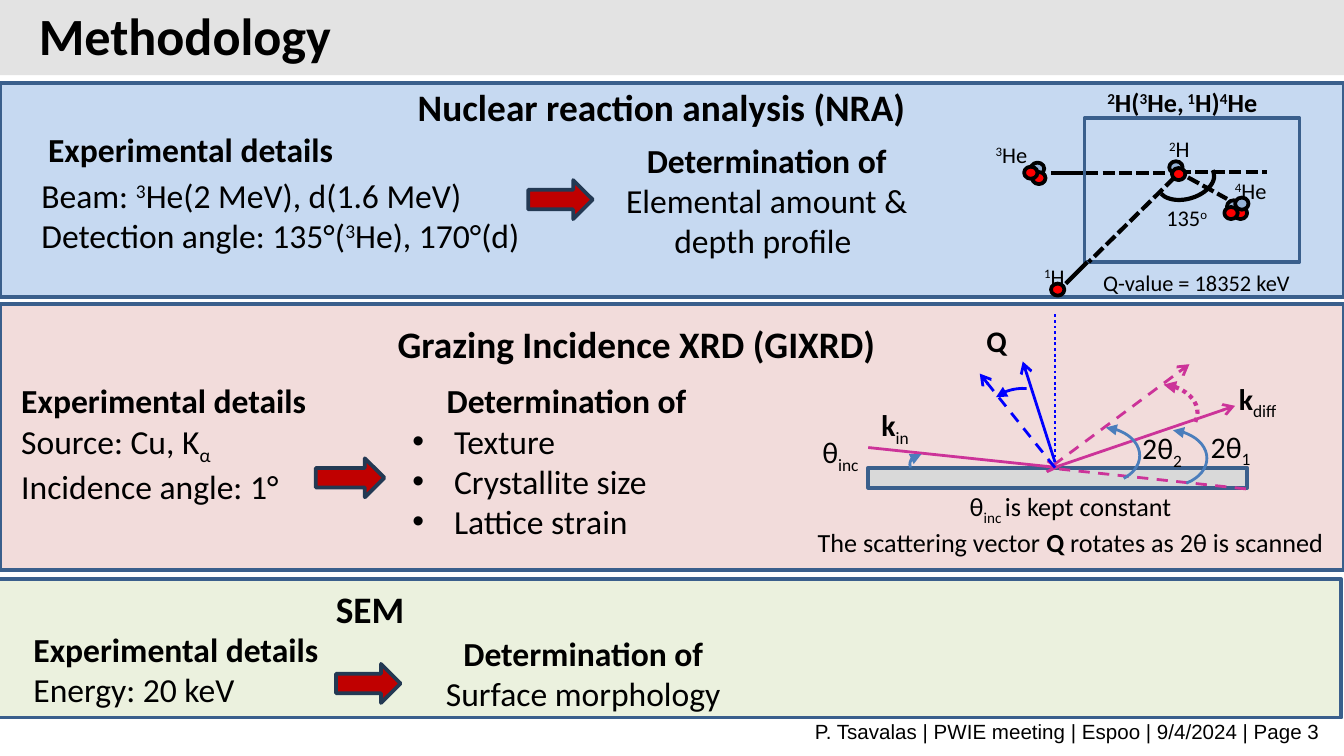
from dataclasses import dataclass
from typing import Any

from lxml import etree
from pptx import Presentation
from pptx.dml.color import RGBColor
from pptx.enum.dml import MSO_LINE
from pptx.enum.shapes import MSO_CONNECTOR, MSO_SHAPE
from pptx.enum.text import MSO_ANCHOR, MSO_AUTO_SIZE, PP_ALIGN
from pptx.oxml.ns import qn
from pptx.util import Inches, Pt

RECT, OVAL, ARC, ARROW = MSO_SHAPE.RECTANGLE, MSO_SHAPE.OVAL, MSO_SHAPE.ARC, MSO_SHAPE.RIGHT_ARROW
DASH, DOT, SHORT_DASH = MSO_LINE.DASH, MSO_LINE.ROUND_DOT, MSO_LINE.SQUARE_DOT
LEFT, CENTER, RIGHT = PP_ALIGN.LEFT, PP_ALIGN.CENTER, PP_ALIGN.RIGHT
TOP, MIDDLE = MSO_ANCHOR.TOP, MSO_ANCHOR.MIDDLE
GROW, FIXED = MSO_AUTO_SIZE.SHAPE_TO_FIT_TEXT, MSO_AUTO_SIZE.NONE
STRAIGHT = MSO_CONNECTOR.STRAIGHT

COLORS = {
    "black": "000000", "band": "E3E3E3", "border": "3A5F8C", "nra": "C6D9F1", "xrd": "F2DCDB",
    "sem": "EBF1DE", "arrow": "C00000", "arrow_edge": "233953", "sample": "D9D9D9",
    "beam": "CC3399", "angle": "4B7EBC", "vector": "0000FF", "neutron": "95B3D7", "proton": "FF0000",
}
BASELINES = {"^": "30000", "_": "-25000"}
DETAILS, RESULT = [("Experimental details", "b")], [("Determination of", "b")]


def color(name):
    """Return the named colour."""
    return RGBColor.from_string(COLORS[name])


def style_line(line, name, width, dash=None, **ends):
    """Colour a line and add dashes and arrowheads (headEnd, tailEnd)."""
    line.fill.solid()
    line.fill.fore_color.rgb = color(name)
    line.width = Pt(width)
    if dash:
        line.dash_style = dash
    for tag, kind in ends.items():
        etree.SubElement(line._get_or_add_ln(), qn(f"a:{tag}")).set("type", kind)


def add_bullet(para):
    """Give a paragraph a hanging round bullet."""
    properties = para._p.get_or_add_pPr()
    properties.set("marL", str(Inches(0.31)))
    properties.set("indent", str(-Inches(0.31)))
    etree.SubElement(properties, qn("a:buFont")).set("typeface", "Arial")
    etree.SubElement(properties, qn("a:buChar")).set("char", "•")


@dataclass
class Region:
    """A box on the page; its parts are placed relative to its corner."""
    page: Any
    left: float
    top: float
    width: float
    height: float

    def place(self, left, top, *size):
        """Turn a local box or point into page lengths."""
        return [Inches(v) for v in (self.left + left, self.top + top, *size)]

    def shape(self, kind, box, fill=None, edge=None, width=2):
        """Add a preset shape."""
        shape = self.page.shapes.add_shape(kind, *self.place(*box))
        shape.shadow.inherit = False
        if fill:
            shape.fill.solid()
            shape.fill.fore_color.rgb = color(fill)
        else:
            shape.fill.background()
        if edge:
            style_line(shape.line, edge, width)
        else:
            shape.line.fill.background()
        return shape

    def panel(self, fill, edge=None):
        """Fill the whole region."""
        self.shape(RECT, (0, 0, self.width, self.height), fill, edge)

    def block_arrow(self, left, top, width=0.48):
        """Add the red arrow from details to results."""
        self.shape(ARROW, (left, top, width, 0.29), "arrow", "arrow_edge")

    def arc(self, box, start, end, name, width=1.5, dash=None, rotation=0, flip=False, **ends):
        """Add an arc between two angles in degrees."""
        arc = self.shape(ARC, box)
        arc.adjustments[0], arc.adjustments[1] = start * 0.6, end * 0.6
        arc.rotation = rotation
        if flip:
            arc._element.spPr.find(qn("a:xfrm")).set("flipH", "1")
        style_line(arc.line, name, width, dash, **ends)

    def line(self, start, end, name, width=1.5, dash=None, **ends):
        """Add a straight line."""
        line = self.page.shapes.add_connector(STRAIGHT, *self.place(*start), *self.place(*end))
        style_line(line.line, name, width, dash, **ends)
        etree.SubElement(line._element.spPr, qn("a:effectLst"))

    def text(self, box, paras, size=18, font="Calibri", align=LEFT, anchor=TOP,
             wrap=True, fill=None, bullets=(), spacing=None):
        """Add paragraphs made of (text, style) spans."""
        shape = self.page.shapes.add_textbox(*self.place(*box))
        if fill:
            shape.fill.solid()
            shape.fill.fore_color.rgb = color(fill)
        frame = shape.text_frame
        frame.word_wrap, frame.vertical_anchor = wrap, anchor
        frame.auto_size = GROW if anchor == TOP else FIXED
        for index, spans in enumerate(paras):
            para = frame.paragraphs[0] if index == 0 else frame.add_paragraph()
            para.alignment = LEFT if index in bullets else align
            if spacing:
                para.line_spacing = Pt(spacing)
            if index in bullets:
                add_bullet(para)
            for words, style in spans:
                span = para.add_run()
                span.text = words
                look = {"name": font, "size": Pt(size), "bold": "b" in style}
                for key, value in look.items():
                    setattr(span.font, key, value)
                span.font.color.rgb = color("black")
                for mark, shift in BASELINES.items():
                    if mark in style:
                        span._r.get_or_add_rPr().set("baseline", shift)


def add_header(region):
    """Draw the title band."""
    region.panel("band")
    region.text((0.19, 0.08, 2.45, 0.38), [[("Methodology", "b")]], 28, anchor=MIDDLE, spacing=32)


def add_footer(region):
    """Write the footer line."""
    words = "P. Tsavalas | PWIE meeting | Espoo | 9/4/2024 | Page 3"
    region.text((0, 0, region.width, region.height), [[(words, "")]], 11, "Arial", RIGHT, MIDDLE)


def add_sem(region):
    """Draw the SEM panel."""
    region.panel("sem", "border")
    region.text((2.42, 0, 1.58, 0.44), [[("SEM", "b")]], 20)
    region.text((0.17, 0.32, 2.49, 0.71), [DETAILS, [("Energy: 20 keV", "")]])
    region.block_arrow(2.52, 0.63)
    region.text((2.75, 0.35, 3.22, 0.71), [RESULT, [("Surface morphology", "")]], align=CENTER)


def add_xrd(region):
    """Draw the GIXRD panel."""
    region.panel("xrd", "border")
    region.text((0.06, 0.52, 2.63, 1.01), [DETAILS, [("Source: Cu, K", ""), ("α", "_")],
                                           [("Incidence angle: 1°", "")]], fill="xrd")
    region.text((2.86, 0.08, 3.96, 0.44), [[("Grazing Incidence XRD (GIXRD)", "b")]], 20, fill="xrd")
    region.block_arrow(2.35, 1.15, 0.51)
    findings = [[(words, "")] for words in ("Texture", "Crystallite size", "Lattice strain")]
    region.text((2.97, 0.52, 2.49, 1.31), [RESULT, *findings], align=CENTER, fill="xrd", bullets=(1, 2, 3))
    add_scattering(Region(region.page, region.left + 5.97, region.top, 4, region.height))


def add_scattering(region):
    """Draw the scattering geometry."""
    region.shape(RECT, (0.49, 1.22, 2.82, 0.15), "sample", "border")
    for start, end, name, dash, ends in (
        ((0.49, 1.07), (1.91, 1.22), "beam", None, {"tailEnd": "arrow"}),
        ((1.87, 1.22), (3.22, 0.76), "beam", None, {"tailEnd": "arrow"}),
        ((1.87, 1.2), (2.88, 0.45), "beam", DASH, {"tailEnd": "arrow"}),
        ((1.88, 1.22), (1.32, 0.52), "vector", DASH, {"tailEnd": "arrow"}),
        ((1.91, 1.23), (3.32, 1.38), "beam", DASH, {}),
        ((1.88, 1.18), (1.64, 0.43), "vector", None, {"tailEnd": "arrow"}),
        ((1.88, 0.08), (1.88, 1.18), "vector", DOT, {}),
    ):
        region.line(start, end, name, dash=dash, **ends)
    for box, start, end, name, extra in (
        ((2.36, 0.6, 0.58, 0.42), 280.27, 14.52, "beam", {"width": 2.25, "dash": DOT}),
        ((0.8, 1.12, 0.17, 0.15), 270, 16.59, "angle", {"flip": True}),
        ((2.43, 0.94, 0.58, 0.42), 280.27, 53.6, "angle", {}),
        ((1.93, 0.92, 0.58, 0.42), 280.27, 44.75, "angle", {}),
        ((1.41, 0.57, 0.5, 0.62), 303.83, 355.68, "vector", {"rotation": 276.4}),
    ):
        region.arc(box, start, end, name, headEnd="triangle", **extra)
    for left, top, width, spans, wrap in (
        (2.94, 0.88, 0.51, [("2θ", ""), ("1", "_")], False),
        (2.43, 0.89, 0.51, [("2θ", ""), ("2", "_")], False),
        (0.05, 0.92, 0.5, [("θ", ""), ("inc", "_")], False),
        (1.27, 0.09, 0.33, [("Q", "b")], True),
        (0.49, 0.72, 0.45, [("k", "b"), ("in", "_")], True),
        (3.15, 0.52, 0.6, [("k", "b"), ("diff", "_")], True),
    ):
        region.text((left, top, width, 0.37), [spans], 16, wrap=wrap)
    region.text((0, 1.34, 3.99, 0.57), [
        [("θ", ""), ("inc ", "_"), ("is kept constant", "")],
        [("The scattering vector ", ""), ("Q", "b"), (" rotates as 2θ is scanned", "")],
    ], 14, align=CENTER)


def add_nra(region):
    """Draw the NRA panel."""
    region.panel("nra", "border")
    region.text((3.01, -0.04, 3.94, 0.44), [[("Nuclear reaction analysis (NRA)", "b")]], 20)
    region.text((0.21, 0.63, 4, 0.71), [
        [("Beam: ", ""), ("3", "^"), ("He(2 MeV), d(1.6 MeV)", "")],
        [("Detection angle: 135°(", ""), ("3", "^"), ("He), 170°(d)", "")],
    ])
    region.block_arrow(3.93, 0.72)
    region.text((4.39, 0.37, 2.63, 1.01), [RESULT, [("Elemental amount & depth profile ", "")]], align=CENTER)
    region.text((0.26, 0.29, 2.34, 0.4), [DETAILS])
    add_reaction(Region(region.page, region.left + 7.3, region.top, 2.7, region.height))


def add_reaction(region):
    """Draw the nuclear reaction and its particles."""
    region.shape(RECT, (0.77, 0.26, 1.6, 1.07), edge="border")
    for start, end, dash in (
        ((0.52, 0.67), (0.76, 0.67), None), ((0.78, 0.67), (1.44, 0.67), SHORT_DASH),
        ((1.44, 0.7), (0.8, 1.33), SHORT_DASH), ((0.63, 1.49), (0.79, 1.33), None),
        ((1.43, 0.64), (1.83, 0.86), SHORT_DASH), ((1.47, 0.66), (2.13, 0.66), SHORT_DASH),
    ):
        region.line(start, end, "black", 2.25, dash)
    for left, top, width, spans in (
        (0.01, 0.38, 0.6, [("3", "^"), ("He", "")]), (0.37, 1.29, 0.41, [("1", "^"), ("H", "")]),
        (1.3, 0.34, 0.38, [("2", "^"), ("H", "")]), (1.79, 0.65, 0.5, [("4", "^"), ("He", "")]),
        (0.81, 1.33, 1.61, [("Q-value = 18352 keV", "")]), (1.28, 0.85, 0.97, [("135", ""), ("o", "^")]),
    ):
        region.text((left, top, width, 0.3), [spans], 12)
    region.text((0.84, -0.03, 1.42, 0.34), [[
        ("2", "b^"), ("H(", "b"), ("3", "b^"), ("He,", "b"), (" 1", "b^"), ("H)", "b"), ("4", "b^"), ("He", "b"),
    ]], 14)
    for left, top, name in (
        (0.37, 0.59, "neutron"), (0.38, 0.66, "proton"), (0.32, 0.62, "proton"), (0.52, 1.49, "proton"),
        (1.4, 0.58, "neutron"), (1.42, 0.63, "proton"), (1.83, 0.87, "neutron"), (1.88, 0.92, "proton"),
        (1.81, 0.92, "proton"), (1.89, 0.85, "neutron"),
    ):
        region.shape(OVAL, (left, top, 0.1, 0.09), name, "black")
    region.arc((1.31, 0.59, 0.43, 0.27), 354.85, 168.93, "black", 2.25, rotation=343.6)


def main():
    """Build the deck."""
    deck = Presentation()
    deck.slide_width = Inches(10)
    deck.slide_height = deck.slide_width * 9 // 16
    page = deck.slides.add_slide(deck.slide_layouts[6])
    for draw, box in (
        (add_header, (0, 0, 10, 0.56)), (add_sem, (-0.02, 4.31, 10, 1.03)), (add_xrd, (0, 2.26, 10, 1.98)),
        (add_nra, (0, 0.62, 10, 1.59)), (add_footer, (5.71, 5.34, 4.21, 0.2)),
    ):
        draw(Region(page, *box))
    deck.save("out.pptx")


if __name__ == "__main__":
    main()
